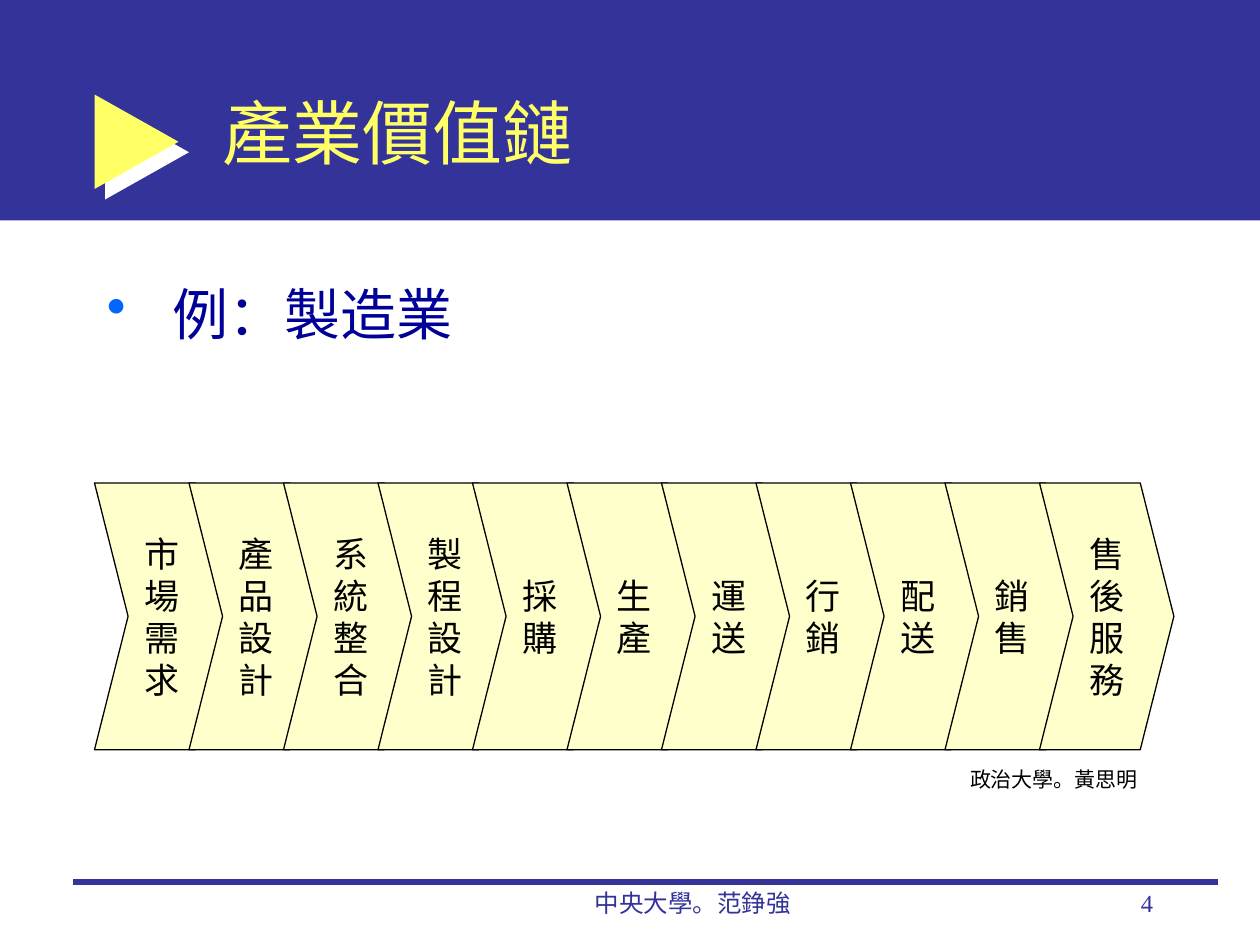
from lxml.etree import SubElement
from pptx import Presentation
from pptx.dml.color import RGBColor
from pptx.enum.shapes import MSO_CONNECTOR, MSO_SHAPE as SHP
from pptx.enum.text import MSO_ANCHOR as ANC, PP_ALIGN as AL
from pptx.oxml import parse_xml
from pptx.oxml.ns import nsdecls, qn
from pptx.util import Inches, Pt

prs = Presentation()
prs.slide_width, prs.slide_height = Inches(10), Inches(7.5)
s = prs.slides.add_slide(prs.slide_layouts[6])
rgb = RGBColor.from_string
COLS = 120
NAVY, YELLOW, CREAM, BLACK = "333399", "FFFF66", "FFFFCC", "000000"
SERIF = "Times New Roman"


def grid(*cells):
    return [round(prs.slide_width * c / COLS) for c in cells]


def write(sp, text, size, color, align=AL.LEFT, anchor=ANC.TOP, wrap=True, font=SERIF):
    tf = sp.text_frame
    for key, value in {"word_wrap": wrap, "vertical_anchor": anchor}.items():
        setattr(tf, key, value)
    p = tf.paragraphs[0]
    p.text = text
    p.alignment = align
    for r in p.runs:
        for key, value in {"name": font, "size": Pt(size)}.items():
            setattr(r.font, key, value)
        r.font.color.rgb = rgb(color)
    return p


for kind, cells, color in [
    (SHP.RECTANGLE, (0, 0, 120, 21), NAVY),
    (SHP.RIGHT_ARROW, (9, 9, 8, 9), YELLOW),
]:
    sp = s.shapes.add_shape(kind, *grid(*cells))
    sp.shadow.inherit = False
    sp.fill.solid()
    sp.fill.fore_color.rgb = rgb(color)
    sp.line.fill.background()

sp.adjustments[0], sp.adjustments[1] = 0.38, 1
effects = sp._element.spPr.find(qn("a:effectLst"))
effects.append(parse_xml(
    f'<a:outerShdw {nsdecls("a")} dist="107950" dir="2700000" algn="ctr" rotWithShape="0">'
    '<a:srgbClr val="FFFFFF"/></a:outerShdw>'))

rule = s.shapes.add_connector(MSO_CONNECTOR.STRAIGHT, *grid(7, 84, 116, 84))
rule.line.color.rgb = rgb(NAVY)
rule.line.width = Pt(3)
SubElement(rule._element.spPr, qn("a:effectLst"))

for cells, text, size, color, style in [
    ((47, 84, 38, 6), "中央大學。范錚強", 14, NAVY, {"align": AL.CENTER}),
    ((86, 84, 25, 6), "4", 14, NAVY, {"align": AL.RIGHT}),
    ((20, 5, 91, 15), "產業價值鏈", 40, YELLOW,
     {"anchor": ANC.MIDDLE, "font": "Noto Sans CJK SC"}),
    ((91.2, 72.4, 18.4, 3.6), "政治大學。黃思明", 12, BLACK, {"wrap": False}),
]:
    write(s.shapes.add_textbox(*grid(*cells)), text, size, color, **style)

body = s.shapes.add_textbox(*grid(9, 26, 102, 54))
pPr = write(body, "例：製造業", 32, "000099")._p.get_or_add_pPr()
pPr.set("marL", str(Inches(0.52)))
pPr.set("indent", str(-Inches(0.52)))
SubElement(SubElement(pPr, qn("a:buClr")), qn("a:srgbClr")).set("val", "0066FF")
SubElement(pPr, qn("a:buChar")).set("char", "•")

steps = ["市場需求", "產品設計", "系統整合", "製程設計", "採購", "生產",
         "運送", "行銷", "配送", "銷售", "售後服務"]
for i, step in enumerate(steps):
    sp = s.shapes.add_shape(SHP.CHEVRON, *grid(9 + 9 * i, 46, 12.8, 25.4))
    sp.shadow.inherit = False
    sp.adjustments[0] = 0.25
    sp.fill.solid()
    sp.fill.fore_color.rgb = rgb(CREAM)
    sp.line.color.rgb = rgb(BLACK)
    sp.line.width = Pt(0.75)
    write(sp, "\n".join(step), 20, BLACK, AL.CENTER, ANC.MIDDLE, False)

prs.save("out.pptx")
